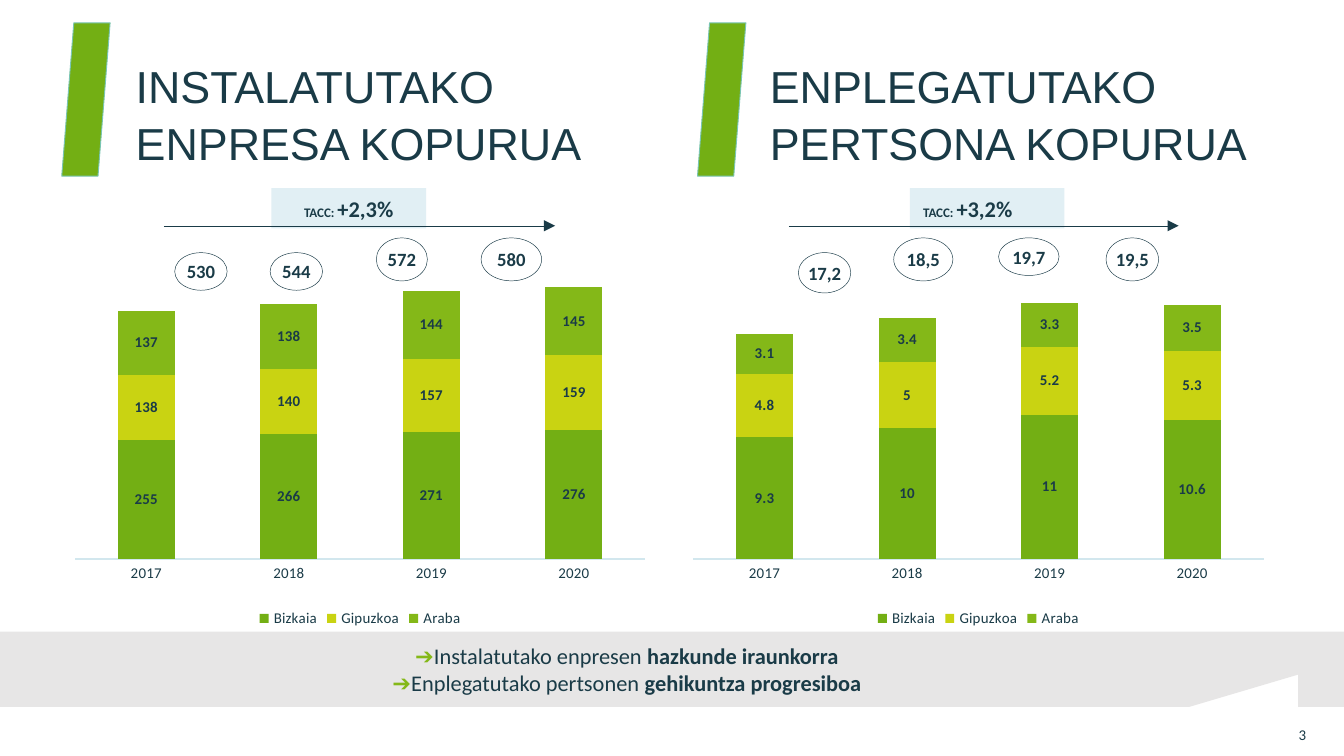
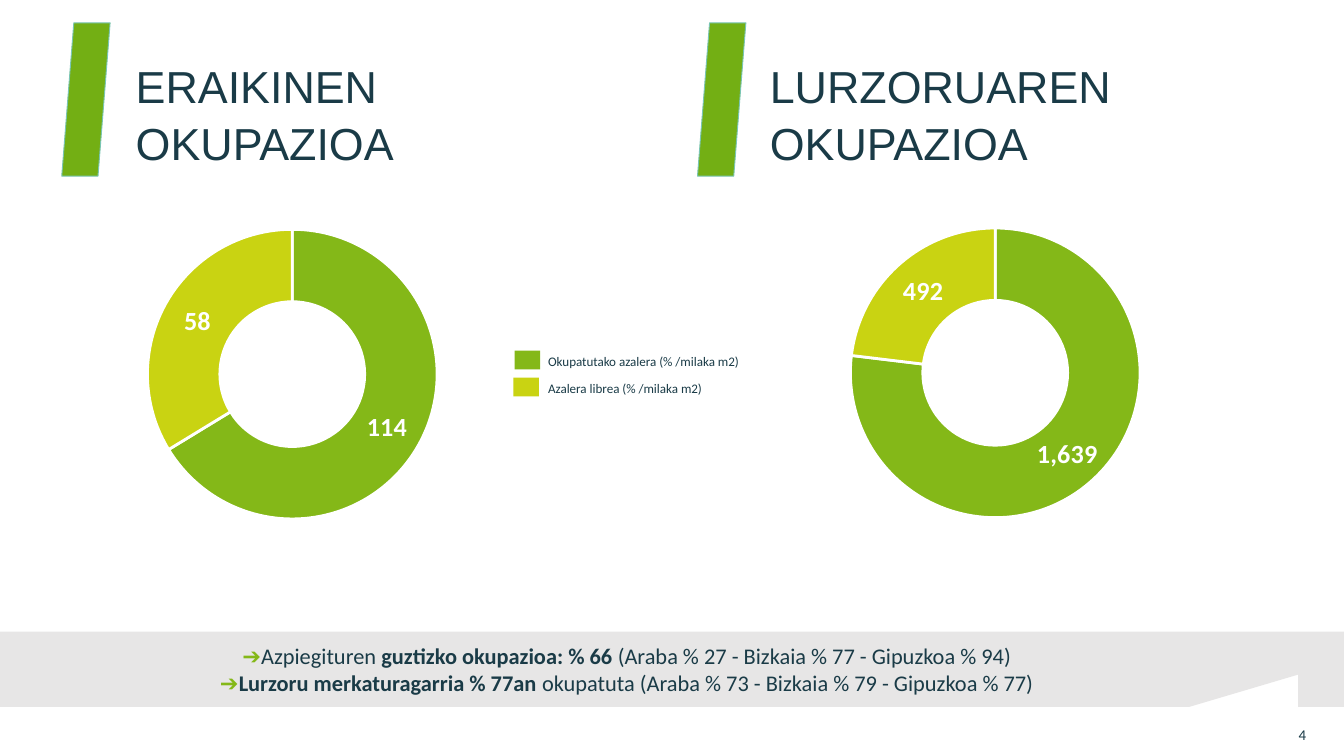
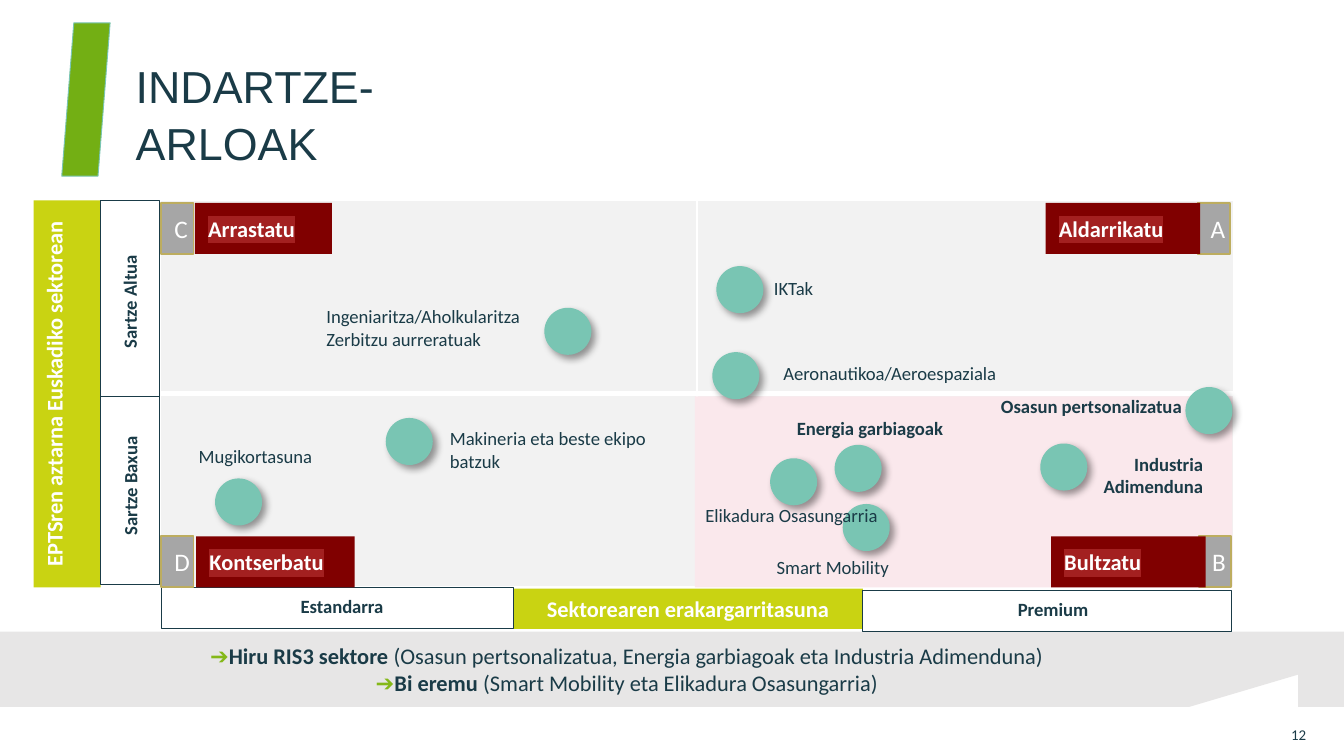
from lxml.etree import SubElement
from pptx import Presentation
from pptx.chart.data import CategoryChartData
from pptx.dml.color import RGBColor
from pptx.enum.chart import XL_CHART_TYPE, XL_LEGEND_POSITION, XL_TICK_MARK
from pptx.enum.shapes import MSO_CONNECTOR, MSO_SHAPE
from pptx.enum.text import MSO_ANCHOR, MSO_AUTO_SIZE, PP_ALIGN
from pptx.oxml.ns import qn
from pptx.util import Inches, Pt

# The slide is a grid of 100 columns by 56.25 rows of square cells.
COLS, ROWS = 100, 56.25
CELL = Inches(10) / COLS

COLORS = {
    "ink": "1A3B47", "white": "FFFFFF", "green": "73AF14", "leaf": "84B818",
    "lime": "C9D312", "teal": "79C5B3", "pale": "E1EFF4", "axis": "D2E7EE",
    "band": "E7E6E6", "panel": "F2F2F2", "pink": "FAE8EC", "gray": "A6A6A6",
    "gold": "BDAD5F", "wine": "800000", "mark": "A32020",
}
BODY, HEAD = "Calibri", "Arial"
LEFT, CENTER, RIGHT = PP_ALIGN.LEFT, PP_ALIGN.CENTER, PP_ALIGN.RIGHT
TOP, MIDDLE = MSO_ANCHOR.TOP, MSO_ANCHOR.MIDDLE


def rgb(name):
    return RGBColor.from_string(COLORS[name])


def grid(*cells):
    return [round(c * CELL) for c in cells]


def add_run(p, text, size, color="ink", bold=False, font=BODY, mark=None):
    r = p.add_run()
    r.text = text
    r.font.size, r.font.bold, r.font.name = Pt(size), bold, font
    r.font.color.rgb = rgb(color)
    if mark:
        rPr = r.font._element
        hl = SubElement(rPr, qn("a:highlight"))
        SubElement(hl, qn("a:srgbClr"), val=COLORS[mark])
        rPr.find(qn("a:latin")).addprevious(hl)


def write(sp, lines, size=10, align=LEFT, anchor=TOP, insets=None, wrap=True, **style):
    """Fill a shape; each line is a text or a list of (text, style) runs."""
    tf = sp.text_frame
    tf.word_wrap, tf.vertical_anchor = wrap, anchor
    tf.auto_size = MSO_AUTO_SIZE.NONE
    if insets:
        tf.margin_left, tf.margin_top, tf.margin_right, tf.margin_bottom = grid(*insets)
    for i, line in enumerate(lines):
        p = tf.add_paragraph() if i else tf.paragraphs[0]
        p.alignment = align
        for text, own in [(line, {})] if isinstance(line, str) else line:
            add_run(p, text, **{"size": size, **style, **own})


def paint(sp, fill=None, line=None, width=0.5):
    sp.shadow.inherit = False
    if fill:
        sp.fill.solid()
        sp.fill.fore_color.rgb = rgb(fill)
    else:
        sp.fill.background()
    if line:
        sp.line.color.rgb = rgb(line)
        sp.line.width = Pt(width)
    else:
        sp.line.fill.background()


def add_box(slide, box, fill=None, line=None, width=0.5, kind=MSO_SHAPE.RECTANGLE):
    sp = slide.shapes.add_shape(kind, *grid(*box))
    paint(sp, fill, line, width)
    return sp


def add_label(slide, box, *lines, rotation=0, **style):
    sp = slide.shapes.add_textbox(*grid(*box))
    sp.rotation = rotation
    write(sp, lines, **style)


def add_heading(slide, text, width, second=False):
    """Title with its slanted bar; the second one on a slide is a text box."""
    add_box(slide, (51.9 if second else 4.6, 1.7, 3.6, 11.4), "green", "teal",
            kind=MSO_SHAPE.PARALLELOGRAM)
    box = grid(56.3 if second else 9.1, 3.7, width, 9.1)
    if second:
        sp = slide.shapes.add_textbox(*box)
    else:
        sp = slide.shapes.title
        sp.left, sp.top, sp.width, sp.height = box
    write(sp, [text], size=24, font=HEAD)
    sp.text_frame.paragraphs[0].line_spacing = 1.05


def add_band(slide, *lines):
    """Notched footer band; each line is a list of (text, bold) runs."""
    top, bottom = 47, 52.6
    fb = slide.shapes.build_freeform(*grid(0, top))
    fb.add_line_segments([grid(*pt) for pt in (
        (COLS, top), (COLS, bottom), (96.6, bottom), (96.6, 50.2),
        (88.5, bottom), (0, bottom))])
    sp = fb.convert_to_shape()
    paint(sp, "band")
    arrow = ("➔", {"font": HEAD, "color": "leaf", "bold": True})
    write(sp, [[arrow] + [(t, {"bold": b}) for t, b in line] for line in lines],
          size=12, align=CENTER, anchor=MIDDLE, insets=(7.9, 0.5, 14.6, 0.5))


def add_slide(prs, number, *band_lines):
    slide = prs.slides.add_slide(prs.slide_layouts[5])
    add_band(slide, *band_lines)
    add_label(slide, (94.1, 53.3, 3.1, 2.7), number, size=8, align=RIGHT,
              anchor=MIDDLE, insets=(0, 0, 0, 0))
    return slide


def set_plot_area(chart, x, y, w, h):
    """Place the inner plot area, in shares of the chart."""
    area = chart._chartSpace.chart.plotArea
    for old in area.findall(qn("c:layout")):
        area.remove(old)
    layout = SubElement(area, qn("c:layout"))
    area.insert(0, layout)
    manual = SubElement(layout, qn("c:manualLayout"))
    for tag, val in (("layoutTarget", "inner"), ("xMode", "edge"), ("yMode", "edge"),
                     ("x", x), ("y", y), ("w", w), ("h", h)):
        SubElement(manual, qn("c:" + tag), val=str(val))


def set_font(font, size, color="ink", bold=False):
    font.size, font.name, font.bold = Pt(size), BODY, bold
    font.color.rgb = rgb(color)


def add_chart(slide, kind, box, cats, series, size):
    data = CategoryChartData()
    data.categories = cats
    for name, vals in series:
        data.add_series(name, vals)
    chart = slide.shapes.add_chart(kind, *grid(*box), data).chart
    chart.has_title = False
    set_font(chart.font, size)
    return chart


def add_stacked_columns(slide, left, values, top_value):
    series = zip(("Bizkaia", "Gipuzkoa", "Araba"), values)
    chart = add_chart(slide, XL_CHART_TYPE.COLUMN_STACKED, (left, 16.6, 44.2, 30.5),
                      ("2017", "2018", "2019", "2020"), series, 8)
    set_plot_area(chart, 0.02, 0.02, 0.96, 0.8)
    chart.has_legend = True
    chart.legend.position = XL_LEGEND_POSITION.BOTTOM
    chart.legend.include_in_layout = False
    set_font(chart.legend.font, 8)
    val, cat = chart.value_axis, chart.category_axis
    val.visible = val.has_major_gridlines = False
    val.minimum_scale, val.maximum_scale = 0, top_value
    cat.major_tick_mark = XL_TICK_MARK.NONE
    cat.format.line.color.rgb = rgb("axis")
    cat.format.line.width = Pt(0.75)
    set_font(cat.tick_labels.font, 8)
    plot = chart.plots[0]
    plot.gap_width, plot.overlap, plot.vary_by_categories = 150, 100, False
    for ser, color in zip(plot.series, ("green", "lime", "leaf")):
        ser.format.fill.solid()
        ser.format.fill.fore_color.rgb = rgb(color)
        ser.data_labels.show_value = True
        set_font(ser.data_labels.font, 8, bold=True)


def add_doughnut(slide, left, top, values, hole):
    chart = add_chart(slide, XL_CHART_TYPE.DOUGHNUT, (left, top, 40.9, 24.5),
                      ("1", "2"), [("Series 1", values)], 10)
    set_plot_area(chart, 0.24, 0.06, 0.53, 0.88)
    chart.has_legend = False
    plot = chart.plots[0]
    plot._element.find(qn("c:holeSize")).set("val", str(hole))
    ser = plot.series[0]
    for i, color in enumerate(("leaf", "lime")):
        fmt = ser.points[i].format
        fmt.fill.solid()
        fmt.fill.fore_color.rgb = rgb(color)
        fmt.line.color.rgb = rgb("white")
        fmt.line.width = Pt(1.5)
    labels = ser.data_labels
    labels.show_value, labels.show_percentage = True, False
    labels.number_format, labels.number_format_is_linked = "#,##0", False
    set_font(labels.font, 14, "white", True)


def add_growth(slide, tag_left, rate, align, start, end):
    """Growth tag standing on an arrow."""
    sp = add_box(slide, (tag_left, 14, 11.5, 3), "pale")
    write(sp, [[("TACC: ", {"size": 7}), (rate, {"size": 12})]], align=align, bold=True)
    cn = slide.shapes.add_connector(MSO_CONNECTOR.STRAIGHT, *grid(start, 16.8, end, 16.8))
    cn.line.color.rgb = rgb("ink")
    cn.line.width = Pt(0.25)
    SubElement(cn.line._get_or_add_ln(), qn("a:tailEnd"), type="triangle")
    SubElement(cn._element.spPr, qn("a:effectLst"))


def add_total(slide, text, *box):
    sp = add_box(slide, box, "white", "ink", 0.25, MSO_SHAPE.OVAL)
    write(sp, [text], align=CENTER, anchor=MIDDLE, insets=(0, 0, 0, 0), bold=True)


def add_dot(slide, x, y):
    sp = add_box(slide, (x, y, 3.5, 3.5), "teal", kind=MSO_SHAPE.OVAL)
    shadow = SubElement(sp._element.spPr.find(qn("a:effectLst")), qn("a:outerShdw"),
                        blurRad=str(Pt(4)), dist=str(Pt(3)), dir=str(45 * 60000),
                        algn="tl", rotWithShape="0")
    color = SubElement(shadow, qn("a:srgbClr"), val="000000")
    SubElement(color, qn("a:alpha"), val="40000")


def add_quadrants(slide):
    table = slide.shapes.add_table(2, 2, *grid(11.9, 14.9, 79.9, 28.8)).table
    table.first_row = table.horz_banding = False
    for row in range(2):
        for col in range(2):
            cell = table.cell(row, col)
            tcPr = cell._tc.get_or_add_tcPr()
            for side in "LRTB":
                thick = side == ("T" if row else "B")
                ln = SubElement(tcPr, qn("a:ln" + side), w=str(Pt(3 if thick else 1)))
                fill = SubElement(ln, qn("a:solidFill"))
                SubElement(fill, qn("a:srgbClr"), val=COLORS["white"])
            cell.fill.solid()
            cell.fill.fore_color.rgb = rgb("panel")


def add_strategy(slide, letter, letter_left, name, left, top, width):
    sp = add_box(slide, (letter_left, top, 2.4, 3.8), "gray", "gold", 1)
    write(sp, [letter], size=13.5, align=CENTER, anchor=MIDDLE, color="white")
    sp = add_box(slide, (left, top, width, 3.8), "wine")
    write(sp, [name], size=12, anchor=MIDDLE, color="white", bold=True, mark="mark")


def build_companies(prs):
    slide = add_slide(
        prs, "3",
        [("Instalatutako enpresen ", False), ("hazkunde iraunkorra", True)],
        [("Enplegatutako pertsonen ", False), ("gehikuntza progresiboa", True)])
    add_heading(slide, "INSTALATUTAKO ENPRESA KOPURUA", 36.2)
    add_heading(slide, "ENPLEGATUTAKO PERTSONA KOPURUA", 38.6, second=True)
    add_stacked_columns(slide, 4.7, ((255, 266, 271, 276), (138, 140, 157, 159),
                                     (137, 138, 144, 145)), 700)
    add_stacked_columns(slide, 50.7, ((9.3, 10, 11, 10.6), (4.8, 5, 5.2, 5.3),
                                      (3.1, 3.4, 3.3, 3.5)), 25)
    add_growth(slide, 20.2, "+2,3%", CENTER, 12.2, 41.3)
    add_growth(slide, 67.7, "+3,2%", LEFT, 58.7, 87.7)
    for total in (("530", 13, 18.8, 3.9, 2.8), ("544", 20.1, 18.8, 3.9, 2.8),
                  ("572", 28, 17.7, 3.8, 3.2), ("580", 35.8, 17.7, 4.5, 3.2),
                  ("17,2", 59.4, 18.8, 3.9, 3), ("18,5", 66.5, 17.7, 4.4, 3.2),
                  ("19,7", 74.3, 17.7, 4.5, 2.8), ("19,5", 82.3, 17.7, 3.9, 3.2)):
        add_total(slide, *total)


def build_occupancy(prs):
    slide = add_slide(
        prs, "4",
        [("Azpiegituren", False), (" guztizko okupazioa: % 66 ", True),
         ("(Araba % 27 - Bizkaia % 77 - Gipuzkoa % 94)", False)],
        [("Lurzoru merkaturagarria % 77an ", True),
         ("okupatuta (Araba % 73 - Bizkaia % 79 - Gipuzkoa % 77)", False)])
    add_heading(slide, "ERAIKINEN OKUPAZIOA", 31.4)
    add_heading(slide, "LURZORUAREN OKUPAZIOA", 31.4, second=True)
    add_doughnut(slide, 1.1, 15.6, (114, 58), 50)
    add_doughnut(slide, 53.4, 15.5, (1639, 492), 60)
    keys = (("leaf", "Okupatutako azalera (% /milaka m2)"),
            ("lime", "Azalera librea (% /milaka m2)"))
    for i, (color, text) in enumerate(keys):
        add_box(slide, (38.3 - 0.1 * i, 26.1 + 2 * i, 1.9, 1.4), color)
        add_label(slide, (39.8, 25.8 + 2 * i, 18.1, 2.2), text, size=7)


def build_matrix(prs):
    slide = add_slide(
        prs, "12",
        [("Hiru RIS3 sektore ", True),
         ("(Osasun pertsonalizatua, Energia garbiagoak eta Industria Adimenduna)", False)],
        [("Bi eremu ", True), ("(Smart Mobility eta Elikadura Osasungarria)", False)])
    add_heading(slide, "INDARTZE-ARLOAK", 31.4)
    add_quadrants(slide)
    add_box(slide, (51.7, 29.5, 40, 14.2), "pink")

    axis_style = dict(size=12, align=CENTER, color="white", bold=True)
    sp = add_box(slide, (-9.4, 26.8, 28.8, 5), "lime")
    sp.rotation = 270
    write(sp, ["EPTSren aztarna Euskadiko sektorean"], **axis_style)
    sp = add_box(slide, (38.2, 43.8, 26, 3), "lime")
    write(sp, ["Sektorearen erakargarritasuna"], anchor=MIDDLE, wrap=False, **axis_style)

    for dot in ((53.3, 19.8), (40.5, 22.9), (28.7, 31.1), (16, 35.6), (57.3, 34.1),
                (53, 26.2), (62.7, 37.5), (62.1, 33.1), (77.4, 33), (88.2, 28.8)):
        add_dot(slide, *dot)

    for box, *lines in (
            ((56.6, 20.1, 7.7, 2.7), "IKTak"),
            ((23.3, 22.2, 18.1, 4.4), "Ingeniaritza/Aholkularitza", "Zerbitzu aurreratuak"),
            ((57.3, 26.4, 22.7, 2.7), "Aeronautikoa/Aeroespaziala"),
            ((32.5, 31.3, 16.7, 4.4), "Makineria eta beste ekipo batzuk"),
            ((13.8, 32.6, 11.8, 2.7), "Mugikortasuna"),
            ((56.8, 40.9, 15.8, 2.7), "Smart Mobility"),
            ((51.5, 37, 15.8, 4.4), "Elikadura Osasungarria")):
        add_label(slide, box, *lines)
    for box, text, align in (
            ((58.3, 30.5, 15.8, 2.7), "Energia garbiagoak", LEFT),
            ((78.8, 33.2, 11.7, 4.4), "Industria Adimenduna", RIGHT),
            ((73.1, 28.9, 15.8, 4.4), "Osasun pertsonalizatua", RIGHT)):
        add_label(slide, box, text, align=align, bold=True)

    for frame, box, text, rotation in (
            ((7.5, 14.9, 4.4, 14.6), (3.2, 21.1, 12.9, 2.7), "Sartze Altua", 270),
            ((7.5, 29.5, 4.4, 14), (2.5, 34.8, 14.4, 2.7), "Sartze Baxua", 270),
            ((12, 43.7, 26.2, 3.1), (19.1, 43.8, 12.7, 2.7), "Estandarra", 0),
            ((64.2, 43.9, 27.4, 3.1), (74.3, 44, 8.1, 2.7), "Premium", 0)):
        add_box(slide, frame, line="ink")
        add_label(slide, box, text, rotation=rotation, align=CENTER, bold=True)

    for strategy in (("A", 89.1, "Aldarrikatu", 77.8, 15.1, 11.5),
                     ("B", 89.2, "Bultzatu", 78.2, 39.9, 11.5),
                     ("D", 12, "Kontserbatu", 14.6, 39.9, 11.8),
                     ("C", 12, "Arrastatu", 14.5, 15.1, 10.2)):
        add_strategy(slide, *strategy)


def main():
    prs = Presentation()
    prs.slide_width, prs.slide_height = grid(COLS, ROWS)
    build_companies(prs)
    build_occupancy(prs)
    build_matrix(prs)
    prs.save("out.pptx")


if __name__ == "__main__":
    main()
